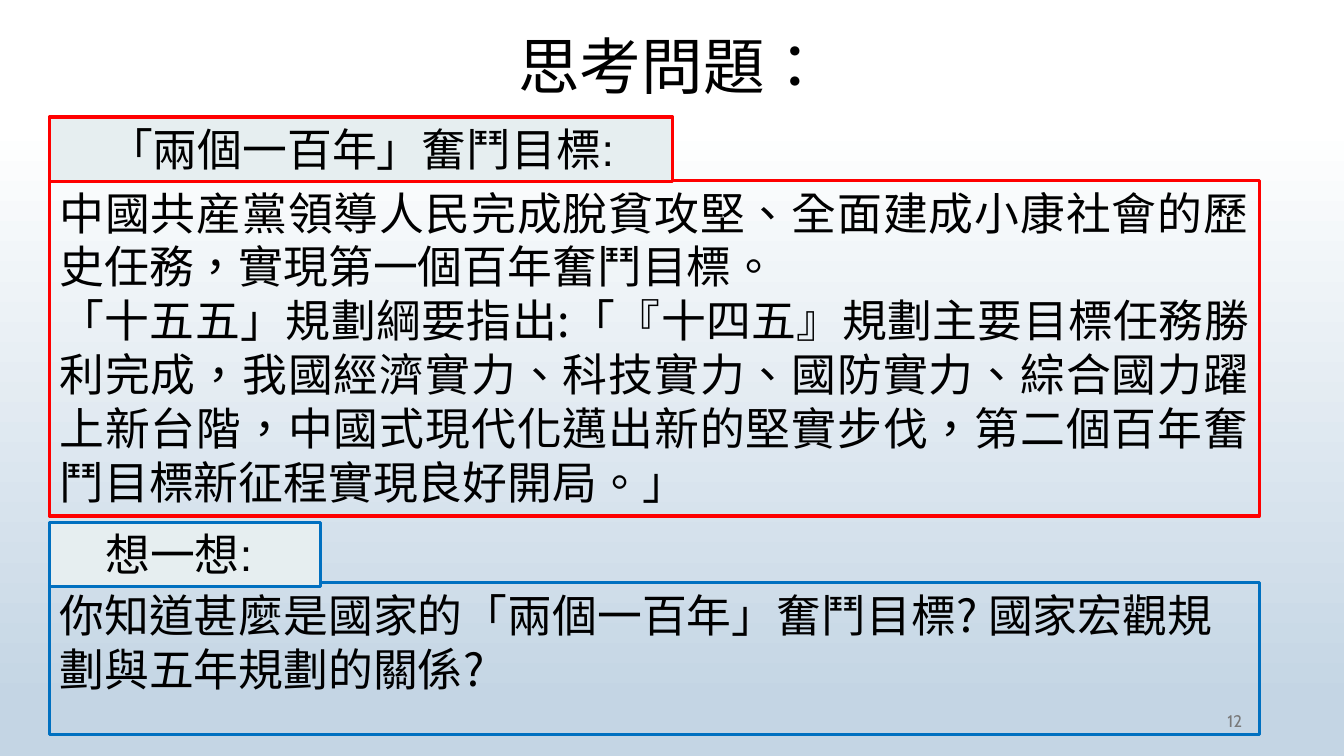
from dataclasses import dataclass

from lxml import etree
from pptx import Presentation
from pptx.dml.color import RGBColor
from pptx.enum.shapes import MSO_SHAPE
from pptx.enum.text import MSO_ANCHOR, MSO_AUTO_SIZE, PP_ALIGN
from pptx.oxml.ns import qn
from pptx.slide import Slide
from pptx.text.text import TextFrame
from pptx.util import Inches, Pt

RECTANGLE = MSO_SHAPE.RECTANGLE
TOP, MIDDLE = MSO_ANCHOR.TOP, MSO_ANCHOR.MIDDLE
GROW, FIXED = MSO_AUTO_SIZE.SHAPE_TO_FIT_TEXT, MSO_AUTO_SIZE.NONE
LEFT, CENTER = PP_ALIGN.LEFT, PP_ALIGN.CENTER
RIGHT, JUSTIFY = PP_ALIGN.RIGHT, PP_ALIGN.JUSTIFY

SLIDE_WIDTH, SLIDE_HEIGHT = Inches(13.33), Inches(7.5)


@dataclass(frozen=True)
class Theme:
    ink: str = "000000"
    muted: str = "797979"
    goal: str = "FF0000"
    question: str = "0070C0"
    label_fill: str = "E6EEF0"
    sky: tuple[tuple[float, str], ...] = ((0.16, "FFFFFF"), (0.93, "C4D5E4"))
    chinese_font: str = "Noto Sans CJK SC"
    label_font: str = "Arial"
    number_font: str = "Cabin"
    title_size: int = 44
    body_size: int = 32
    number_size: int = 12
    border: float = 2.25


THEME = Theme()


@dataclass(frozen=True)
class Area:
    """Percentages of the slide's width and height."""

    left: float
    top: float
    width: float
    height: float

    def emu(self) -> tuple[int, int, int, int]:
        return (
            round(SLIDE_WIDTH * self.left / 100),
            round(SLIDE_HEIGHT * self.top / 100),
            round(SLIDE_WIDTH * self.width / 100),
            round(SLIDE_HEIGHT * self.height / 100),
        )


@dataclass(frozen=True)
class Wording:
    paragraphs: tuple[str, ...]
    size: int
    font: str = THEME.chinese_font
    color: str = THEME.ink
    align: PP_ALIGN = LEFT
    anchor: MSO_ANCHOR = TOP
    autosize: MSO_AUTO_SIZE = GROW


@dataclass(frozen=True)
class Section:
    label: str
    label_top: float
    label_width: float
    paragraphs: tuple[str, ...]
    body_top: float
    body_height: float
    color: str
    align: PP_ALIGN


MARGIN, BODY_WIDTH, LABEL_HEIGHT = 3.68, 90.02, 8.53
TITLE_AREA = Area(6.9, 3.2, 86.27, 11.87)
NUMBER_AREA = Area(70.67, 92.67, 22.5, 5.33)

SECTIONS = (
    Section(
        "想一想: ", 69.07, 20.18,
        ("你知道甚麼是國家的「兩個一百年」奮鬥目標? 國家宏觀規劃與五年規劃的關係?",),
        77.07, 20.13, THEME.question, LEFT,
    ),
    Section(
        "「兩個一百年」奮鬥目標:", 15.47, 46.36,
        (
            "中國共産黨領導人民完成脫貧攻堅、全面建成小康社會的歷史任務，"
            "實現第一個百年奮鬥目標。",
            "「十五五」規劃綱要指出:「『十四五』規劃主要目標任務勝利完成，"
            "我國經濟實力、科技實力、國防實力、綜合國力躍上新台階，"
            "中國式現代化邁出新的堅實步伐，第二個百年奮鬥目標新征程實現良好開局。」",
        ),
        23.87, 44.4, THEME.goal, JUSTIFY,
    ),
)


def write(frame: TextFrame, wording: Wording, line_spacing: float = 1.0) -> None:
    frame.word_wrap = True
    frame.auto_size = wording.autosize
    frame.vertical_anchor = wording.anchor
    for index, sentence in enumerate(wording.paragraphs):
        paragraph = frame.add_paragraph() if index else frame.paragraphs[0]
        paragraph.alignment = wording.align
        paragraph.line_spacing = line_spacing
        run = paragraph.add_run()
        run.text = sentence
        run.font.size = Pt(wording.size)
        run.font.name = wording.font
        run.font.color.rgb = RGBColor.from_string(wording.color)
        properties = run.font._element
        properties.set("lang", "zh-TW")
        east_asian = etree.Element(qn("a:ea"), typeface=THEME.chinese_font)
        properties.find(qn("a:latin")).addnext(east_asian)


def draw_panel(
    slide: Slide, area: Area, border: str, wording: Wording, fill: str | None = None
) -> None:
    panel = slide.shapes.add_shape(RECTANGLE, *area.emu())
    panel.shadow.inherit = False
    if fill:
        panel.fill.solid()
        panel.fill.fore_color.rgb = RGBColor.from_string(fill)
    else:
        panel.fill.background()
    panel.line.color.rgb = RGBColor.from_string(border)
    panel.line.width = Pt(THEME.border)
    write(panel.text_frame, wording)


def draw_section(slide: Slide, section: Section) -> None:
    draw_panel(
        slide,
        Area(MARGIN, section.body_top, BODY_WIDTH, section.body_height),
        section.color,
        Wording(section.paragraphs, THEME.body_size, align=section.align),
    )
    draw_panel(
        slide,
        Area(MARGIN, section.label_top, section.label_width, LABEL_HEIGHT),
        section.color,
        Wording((section.label,), THEME.body_size, THEME.label_font, align=CENTER),
        THEME.label_fill,
    )


def paint_background(slide: Slide) -> None:
    fill = slide.background.fill
    fill.gradient()
    fill.gradient_angle = 270
    for stop, (position, color) in zip(fill.gradient_stops, THEME.sky):
        stop.position = position
        stop.color.rgb = RGBColor.from_string(color)


def draw_title(slide: Slide) -> None:
    title = slide.shapes.title
    title.left, title.top, title.width, title.height = TITLE_AREA.emu()
    wording = Wording(
        ("思考問題：",), THEME.title_size, align=CENTER, anchor=MIDDLE, autosize=FIXED
    )
    write(title.text_frame, wording, 0.9)


def draw_page_number(slide: Slide) -> None:
    page_number = slide.shapes.add_textbox(*NUMBER_AREA.emu())
    wording = Wording(
        ("12",), THEME.number_size, THEME.number_font, THEME.muted, RIGHT, MIDDLE, FIXED
    )
    write(page_number.text_frame, wording)


def main() -> None:
    presentation = Presentation()
    presentation.slide_width, presentation.slide_height = SLIDE_WIDTH, SLIDE_HEIGHT
    slide = presentation.slides.add_slide(presentation.slide_layouts[5])
    paint_background(slide)
    draw_title(slide)
    draw_page_number(slide)
    for section in SECTIONS:
        draw_section(slide, section)
    presentation.save("out.pptx")


if __name__ == "__main__":
    main()
